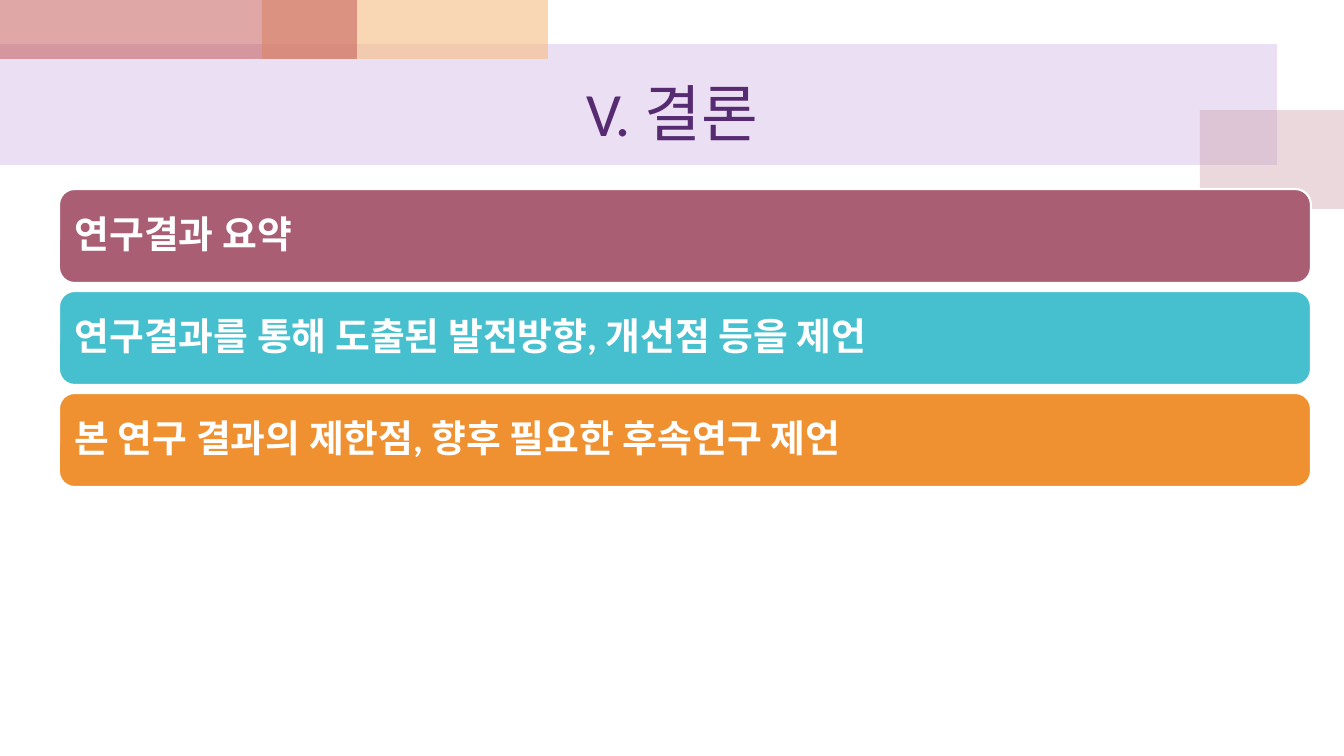
from lxml.etree import SubElement
from pptx import Presentation
from pptx.dml.color import RGBColor
from pptx.enum.shapes import MSO_SHAPE as Shape
from pptx.enum.text import MSO_ANCHOR as Anchor, PP_ALIGN as Align
from pptx.oxml.ns import qn
from pptx.util import Pt

PX = 914400 / 100.8
WHITE = RGBColor(0xFF, 0xFF, 0xFF)
PURPLE = RGBColor(0x56, 0x2B, 0x71)
LILAC = RGBColor(0xBF, 0x98, 0xD8)
MAUVE = RGBColor(0xCC, 0x9E, 0xAC)
PEACH = RGBColor(0xF5, 0xBC, 0x83)
RED = RGBColor(0xC0, 0x50, 0x4D)
ROSE = RGBColor(0xAA, 0x5E, 0x74)
TEAL = RGBColor(0x46, 0xC0, 0xCE)
ORANGE = RGBColor(0xEF, 0x90, 0x31)

TITLE = "V. 결론"
BANDS = [
    ((0, 44, 1277, 121), LILAC, 30),
    ((1200, 110, 144, 99), MAUVE, 40),
    ((262, 0, 286, 59), PEACH, 60),
    ((0, 0, 357, 59), RED, 50),
]
CARDS = [
    ("연구결과 요약", ROSE),
    ("연구결과를 통해 도출된 발전방향, 개선점 등을 제언", TEAL),
    ("본 연구 결과의 제한점, 향후 필요한 후속연구 제언", ORANGE),
]
CARD_LEFT, CARD_TOP, CARD_WIDTH, CARD_HEIGHT, CARD_STEP = 59, 189, 1252, 94, 102


def px(length):
    """Turn pixels into EMU."""
    return round(length * PX)


def add_block(page, kind, place, color):
    """Add a filled shape without outline or shadow."""
    block = page.shapes.add_shape(kind, *map(px, place))
    block.shadow.inherit = False
    block.fill.solid()
    block.fill.fore_color.rgb = color
    block.line.fill.background()
    return block


def write(box, text, *, size, color, bold=False, align=Align.LEFT, spacing=1.0, inset=10):
    """Write one formatted, vertically centred paragraph."""
    frame = box.text_frame
    frame.word_wrap = True
    frame.vertical_anchor = Anchor.MIDDLE
    frame.margin_left = frame.margin_right = px(inset)
    frame.margin_top = frame.margin_bottom = px(inset)
    para = frame.paragraphs[0]
    para.alignment = align
    para.line_spacing = spacing
    span = para.add_run()
    span.text = text
    span.font.name = "Calibri"
    span.font.size = Pt(size)
    span.font.bold = bold
    span.font.color.rgb = color


def main():
    """Build and save the slide."""
    deck = Presentation()
    deck.slide_width, deck.slide_height = px(1344), px(756)
    page = deck.slides.add_slide(deck.slide_layouts[5])

    for place, color, opacity in BANDS:
        band = add_block(page, Shape.RECTANGLE, place, color)
        tint = band.fill._xPr.find(qn("a:solidFill"))[0]
        SubElement(tint, qn("a:alpha"), val=str(opacity * 1000))

    title = page.shapes.title
    title.left, title.top, title.width, title.height = map(px, (67, 59, 1210, 106))
    write(title, TITLE, size=44, color=PURPLE, align=Align.CENTER)
    title.element.getparent().append(title.element)

    for row, (text, color) in enumerate(CARDS):
        place = (CARD_LEFT, CARD_TOP + row * CARD_STEP, CARD_WIDTH, CARD_HEIGHT)
        card = add_block(page, Shape.ROUNDED_RECTANGLE, place, color)
        card.line.color.rgb = WHITE
        card.line.width = Pt(1.5)
        write(card, text, size=27, color=WHITE, bold=True, spacing=0.9, inset=11)

    deck.save("out.pptx")


if __name__ == "__main__":
    main()
